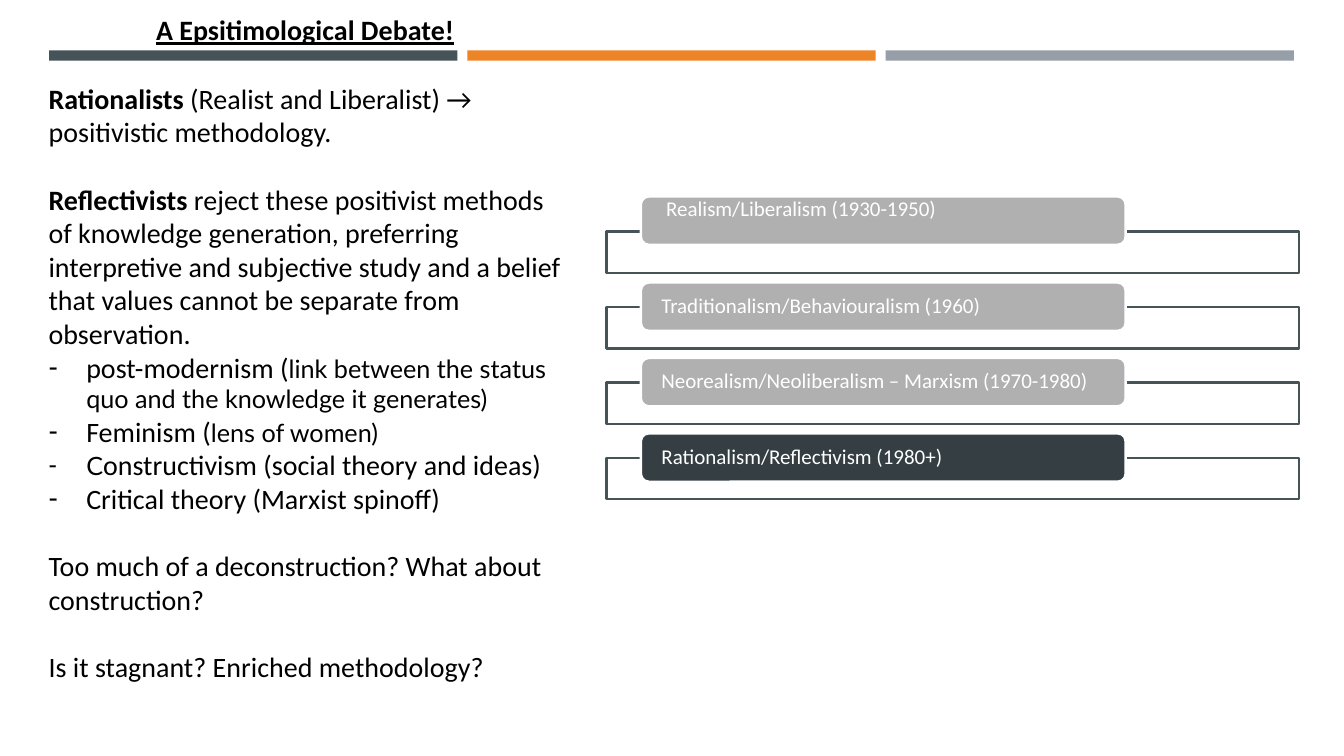
"""Builds the slide on the rationalist and reflectivist debate."""
from dataclasses import dataclass

from lxml.etree import SubElement
from pptx import Presentation
from pptx.dml.color import RGBColor
from pptx.enum.shapes import MSO_SHAPE
from pptx.enum.text import MSO_ANCHOR, MSO_AUTO_SIZE, PP_ALIGN
from pptx.oxml.ns import qn
from pptx.util import Cm, Pt


@dataclass(frozen=True)
class Theme:
    slate: str = "465359"
    orange: str = "ED8428"
    steel: str = "969FA7"
    grey: str = "B0B0B0"
    dark: str = "343E43"
    white: str = "FFFFFF"
    black: str = "000000"
    font: str = "Calibri"
    accent_font: str = "Lato"
    text_size: float = 20
    small_size: float = 18
    label_size: float = 15
    line_width: float = 1.75
    gap: float = 24


class SlideBuilder:
    def __init__(self, slide, theme):
        self.slide = slide
        self.theme = theme

    def style(self, r, size, color, font=None, bold=False):
        r.font.name = font or self.theme.font
        r.font.size = Pt(size)
        r.font.bold = bold
        r.font.color.rgb = RGBColor.from_string(color)

    def place(self, sp, left, top, width, height):
        sp.left, sp.top, sp.width, sp.height = map(Cm, (left, top, width, height))
        tf = sp.text_frame
        tf.word_wrap = True
        tf.auto_size = MSO_AUTO_SIZE.NONE
        tf.vertical_anchor = MSO_ANCHOR.TOP
        return tf

    def title(self, text, *box):
        tf = self.place(self.slide.shapes.title, *box)
        tf.text = text
        p = tf.paragraphs[0]
        p.alignment = PP_ALIGN.CENTER
        r = p.runs[0]
        self.style(r, self.theme.text_size, self.theme.black, bold=True)
        r.font.underline = True

    def body(self, items, *box):
        tf = self.place(self.slide.placeholders[1], *box)
        for i, (kind, runs) in enumerate(items):
            p = tf.paragraphs[0] if i == 0 else tf.add_paragraph()
            p.alignment = PP_ALIGN.LEFT
            p.space_before = Pt(self.theme.gap if kind == "block" and i else 0)
            self.bullet(p, kind == "dash")
            for text, look in runs:
                r = p.add_run()
                r.text = text
                small = look == "small"
                self.style(
                    r,
                    self.theme.small_size if small else self.theme.text_size,
                    self.theme.black,
                    self.theme.accent_font if small else None,
                    look == "bold",
                )

    def bullet(self, p, dashed):
        pPr = p._p.get_or_add_pPr()
        indent = Cm(0.95) if dashed else 0
        pPr.set("marL", str(indent))
        pPr.set("indent", str(-indent))
        if dashed:
            SubElement(pPr, qn("a:buChar")).set("char", "-")
        else:
            SubElement(pPr, qn("a:buNone"))

    def box(self, shape, fill, line, *bounds):
        sp = self.slide.shapes.add_shape(shape, *map(Cm, bounds))
        sp.shadow.inherit = False
        sp.fill.solid()
        sp.fill.fore_color.rgb = RGBColor.from_string(fill)
        if line:
            sp.line.color.rgb = RGBColor.from_string(line)
            sp.line.width = Pt(self.theme.line_width)
        else:
            sp.line.fill.background()
        return sp

    def frame(self, *bounds):
        sp = self.box(MSO_SHAPE.RECTANGLE, self.theme.white, self.theme.slate, *bounds)
        color = sp._element.spPr.find(qn("a:solidFill")).find(qn("a:srgbClr"))
        SubElement(color, qn("a:alpha")).set("val", "90000")

    def label(self, text, fill, anchor, *bounds):
        sp = self.box(MSO_SHAPE.ROUNDED_RECTANGLE, fill, self.theme.white, *bounds)
        tf = sp.text_frame
        tf.word_wrap = True
        tf.vertical_anchor = anchor
        tf.margin_left = tf.margin_right = Cm(0.46)
        tf.margin_top = tf.margin_bottom = 0
        tf.text = text
        p = tf.paragraphs[0]
        p.alignment = PP_ALIGN.LEFT
        p.line_spacing = 0.9
        self.style(p.runs[0], self.theme.label_size, self.theme.white)


def main():
    theme = Theme()
    prs = Presentation()
    prs.slide_width, prs.slide_height = Cm(33.87), Cm(19.05)
    s = SlideBuilder(prs.slides.add_slide(prs.slide_layouts[1]), theme)

    for i, color in enumerate((theme.slate, theme.orange, theme.steel)):
        s.box(MSO_SHAPE.RECTANGLE, color, None, 1.24 + 10.54 * i, 1.27, 10.29, 0.26)

    middle = MSO_ANCHOR.MIDDLE
    debates = [
        (" Realism/Liberalism (1930-1950)", theme.grey, MSO_ANCHOR.TOP, 0.89),
        ("Traditionalism/Behaviouralism (1960)", theme.grey, middle, 0.62),
        ("Neorealism/Neoliberalism – Marxism (1970-1980)", theme.grey, middle, 0.62),
        ("Rationalism/Reflectivism (1980+)", theme.dark, middle, 0.62),
    ]
    for i, (text, fill, anchor, rise) in enumerate(debates):
        top = 5.84 + 1.9 * i
        s.frame(15.29, top, 17.45, 1.04)
        s.label(text, fill, anchor, 16.15, top - rise, 12.22, 1.22)

    s.title("A Epsitimological Debate!", 0.97, 0.2, 13.44, 1.1)
    s.body([
        ("block", [("Rationalists", "bold"),
                   (" (Realist and Liberalist) → positivistic methodology.", "plain")]),
        ("block", [("Reflectivists", "bold"),
                   (" reject these positivist methods of knowledge generation, "
                    "preferring interpretive and subjective study and a belief "
                    "that values cannot be separate from observation.", "plain")]),
        ("dash", [("post-modernism (", "plain"),
                  ("link between the status quo and the knowledge it generates)", "small")]),
        ("dash", [("Feminism (", "plain"), ("lens of women)", "small")]),
        ("dash", [("C", "small"), ("onstructivism (social theory and ideas)", "plain")]),
        ("dash", [("Critical theory (Marxist spinoff)", "plain")]),
        ("block", [("Too much of a deconstruction? What about construction?", "plain")]),
        ("block", [("Is it stagnant? Enriched methodology?", "plain")]),
    ], 0.97, 1.92, 13.44, 16.3)
    prs.save("out.pptx")


if __name__ == "__main__":
    main()
